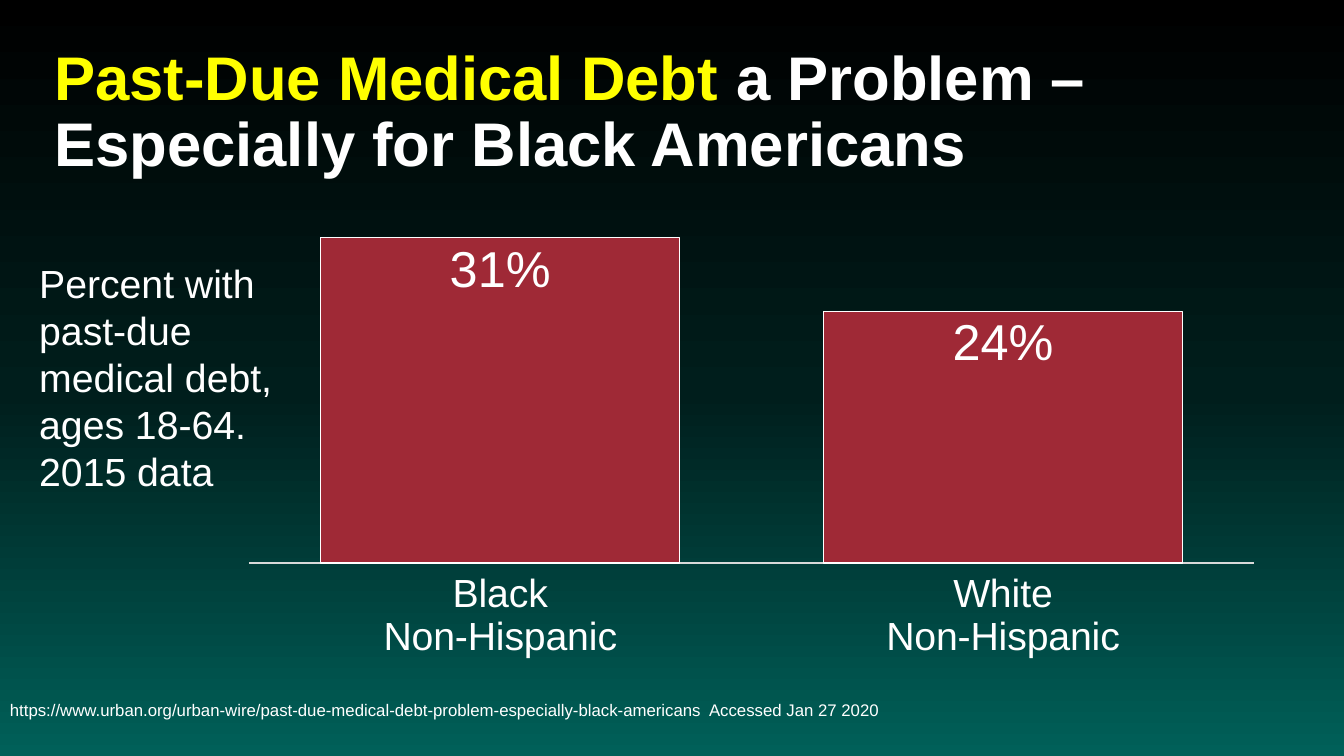
from copy import deepcopy

from lxml import etree
from pptx import Presentation
from pptx.chart.data import CategoryChartData
from pptx.dml.color import RGBColor
from pptx.enum.chart import XL_CHART_TYPE, XL_LABEL_POSITION, XL_TICK_LABEL_POSITION, XL_TICK_MARK
from pptx.enum.text import MSO_ANCHOR
from pptx.oxml.ns import qn
from pptx.util import Inches, Pt

COLUMN = XL_CHART_TYPE.COLUMN_CLUSTERED
INSIDE = XL_LABEL_POSITION.INSIDE_END
LOW = XL_TICK_LABEL_POSITION.LOW
NO_TICK = XL_TICK_MARK.NONE
TOP, MIDDLE = MSO_ANCHOR.TOP, MSO_ANCHOR.MIDDLE

WHITE = RGBColor(0xFF, 0xFF, 0xFF)
YELLOW = RGBColor(0xFF, 0xFF, 0x00)
RED = RGBColor(0x9F, 0x29, 0x36)
GREY = RGBColor(0xD9, 0xD9, 0xD9)
STOPS = [
    (0, RGBColor(0x00, 0x00, 0x00)),
    (0.52, RGBColor(0x00, 0x1E, 0x1C)),
    (1, RGBColor(0x00, 0x60, 0x59)),
]

TITLE_BOX = (0.44, 0.4, 12.66, 1.45)
NOTE_BOX = (0.29, 2.52, 3.05, 2.46)
CHART_BOX = (2.26, 1.85, 10.39, 4.73)
SOURCE_BOX = (0, 6.58, 9, 0.92)
PLOT = {"x": 0.02, "y": 0.02, "w": 0.96, "h": 0.77}


def set_font(font, size, color=WHITE, bold=False):
    style = {"name": "Arial", "size": Pt(size), "bold": bold}
    for key, value in style.items():
        setattr(font, key, value)
    font.color.rgb = color


def set_line(line, color):
    line.color.rgb = color
    line.width = Pt(0.75)


def paint_back(slide):
    fill = slide.background.fill
    fill.gradient()
    fill.gradient_angle = 270
    stop_list = next(slide.element.iter(qn("a:gsLst")))
    stop_list.append(deepcopy(stop_list[-1]))
    for stop, (place, color) in zip(fill.gradient_stops, STOPS):
        stop.position = place
        stop.color.rgb = color


def add_text(slide, box, runs, size, anchor=MIDDLE, bold=False, spacing=1.0):
    """Write one paragraph of (text, colour) runs in the box."""
    frame = slide.shapes.add_textbox(*map(Inches, box)).text_frame
    frame.word_wrap = True
    frame.vertical_anchor = anchor
    para = frame.paragraphs[0]
    para.line_spacing = spacing
    for text, color in runs:
        run = para.add_run()
        run.text = text
        set_font(run.font, size, color, bold)


def place_plot(chart):
    """Fix the inner plot area as shares of the chart."""
    area = next(chart.element.iter(qn("c:plotArea")))
    for old in area.findall(qn("c:layout")):
        area.remove(old)
    layout = etree.Element(qn("c:layout"))
    manual = etree.SubElement(layout, qn("c:manualLayout"))
    values = {"layoutTarget": "inner", "xMode": "edge", "yMode": "edge", **PLOT}
    for tag, value in values.items():
        etree.SubElement(manual, qn(f"c:{tag}")).set("val", str(value))
    area.insert(0, layout)


def add_bars(slide, box):
    data = CategoryChartData(number_format="0%")
    data.categories = ["Black\nNon-Hispanic", "White\nNon-Hispanic"]
    data.add_series("Series 1", (0.31, 0.24))
    chart = slide.shapes.add_chart(COLUMN, *map(Inches, box), data).chart
    chart.has_legend = chart.has_title = False
    set_font(chart.font, 28)
    place_plot(chart)

    groups = chart.category_axis
    groups.major_tick_mark = groups.minor_tick_mark = NO_TICK
    groups.tick_label_position = LOW
    set_font(groups.tick_labels.font, 28)
    set_line(groups.format.line, GREY)

    scale = chart.value_axis
    axis = {"visible": False, "has_major_gridlines": False,
            "minimum_scale": 0, "maximum_scale": 0.35}
    for key, value in axis.items():
        setattr(scale, key, value)
    scale.tick_labels.number_format = "0%"
    scale.tick_labels.number_format_is_linked = False

    plot = chart.plots[0]
    for key, value in {"gap_width": 40, "overlap": -27, "vary_by_categories": False}.items():
        setattr(plot, key, value)
    bars = plot.series[0]
    bars.format.fill.solid()
    bars.format.fill.fore_color.rgb = RED
    set_line(bars.format.line, WHITE)

    labels = bars.data_labels
    shown = {"show_value": True, "position": INSIDE,
             "number_format": "0%", "number_format_is_linked": False}
    for key, value in shown.items():
        setattr(labels, key, value)
    set_font(labels.font, 36)


def main():
    deck = Presentation()
    deck.slide_width, deck.slide_height = Inches(13.33), Inches(7.5)
    slide = deck.slides.add_slide(deck.slide_layouts[6])
    paint_back(slide)
    title = [("Past-Due Medical Debt ", YELLOW),
             ("a Problem – Especially for Black Americans", WHITE)]
    add_text(slide, TITLE_BOX, title, 44, bold=True, spacing=0.9)
    source = ("https://www.urban.org/urban-wire/past-due-medical-debt-problem-"
              "especially-black-americans  Accessed Jan 27 2020")
    add_text(slide, SOURCE_BOX, [(source, WHITE)], 12)
    note = "Percent with past-due medical debt, ages 18-64. 2015 data"
    add_text(slide, NOTE_BOX, [(note, WHITE)], 28, anchor=TOP)
    add_bars(slide, CHART_BOX)
    deck.save("out.pptx")


if __name__ == "__main__":
    main()
